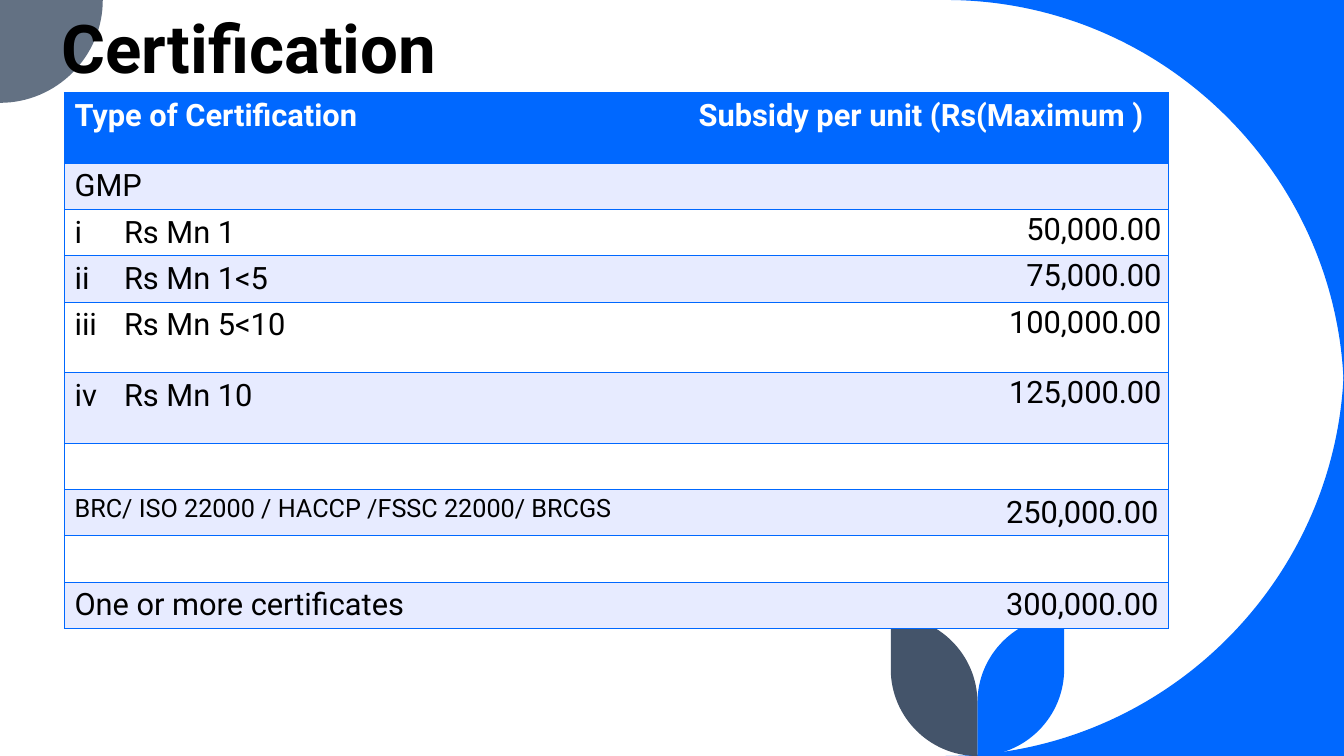
from lxml.etree import SubElement
from pptx import Presentation
from pptx.dml.color import RGBColor as RGB
from pptx.enum.text import MSO_ANCHOR as ANCHOR, MSO_AUTO_SIZE as FIT, PP_ALIGN as ALIGN
from pptx.oxml.ns import qn
from pptx.util import Inches, Pt

WIDTH, HEIGHT = Inches(13.33), Inches(7.5)
FONT = "Roboto"
COLORS = {"blue": "0068FF", "gray": "637183", "slate": "44546A",
          "band": "E7EBFF", "white": "FFFFFF", "black": "000000"}
COLUMNS = (3.68, 42.76, 35.71)
TALL, SHORT = 9.33, 6.13
TALL_ROWS = (0, 4, 5)
ROWS = [
    ("Type of Certification", "", "Subsidy per unit (Rs(Maximum )"),
    ("GMP", "", ""),
    ("i", "Rs Mn 1", "50,000.00"),
    ("ii", "Rs Mn 1<5", "75,000.00"),
    ("iii", "Rs Mn 5<10", "100,000.00"),
    ("iv", "Rs Mn 10", "125,000.00"),
    ("", "", ""),
    ("BRC/ ISO 22000 / HACCP /FSSC 22000/ BRCGS", "", "250,000.00"),
    ("", "", ""),
    ("One or more certificates", "", "300,000.00"),
]


def x(share):
    """Return a percentage of the slide width."""
    return round(WIDTH * share / 100)


def y(share):
    """Return a percentage of the slide height."""
    return round(HEIGHT * share / 100)


def color(name):
    """Return a palette colour."""
    return RGB.from_string(COLORS[name])


def arc(start, corner, end):
    """Return the four Bezier points of a quarter circle bending towards a corner."""
    controls = [tuple(a + 0.55 * (c - a) for a, c in zip(point, corner))
                for point in (start, end)]
    return [start, *controls, end]


def bend(sp, first):
    """Turn three straight segments of an outline into one curve."""
    lines = list(next(sp._element.iter(qn("a:path"))))[first:first + 3]
    curve = lines[0].makeelement(qn("a:cubicBezTo"))
    lines[0].addprevious(curve)
    for line in lines:
        curve.append(line[0])
        line.getparent().remove(line)


def add_outline(s, fill, *parts):
    """Draw a closed filled outline made of arcs and single points."""
    points = [(x(px), y(py)) for part in parts for px, py in part]
    builder = s.shapes.build_freeform(*points[0])
    builder.add_line_segments(points[1:])
    sp = builder.convert_to_shape()
    for i in reversed([i for i, part in enumerate(parts) if len(part) == 4]):
        bend(sp, sum(len(part) for part in parts[:i]) + 1)
    sp.shadow.inherit = False
    sp.fill.solid()
    sp.fill.fore_color.rgb = color(fill)
    sp.line.fill.background()


def add_leaf(s, fill, outer):
    """Draw a leaf from the middle stem to its outer edge."""
    stem, tip, root, side, base = 72.73, 81.46, 92.93, 88.53, 100
    add_outline(s, fill, arc((outer, side), (outer, base), (stem, base)),
                arc((stem, root), (stem, tip), (outer, tip)))


def add_decoration(s):
    """Draw the curved corners and the two leaves."""
    edge, big = 70.37, 52.67
    add_outline(s, "blue", arc((edge, 0), (100, 0), (100, big)), [(100, 0)])
    add_outline(s, "blue", arc((100, 100 - big), (100, 100), (edge, 100)), [(100, 100)])
    add_outline(s, "gray", arc((7.65, 0), (7.65, 13.6), (0, 13.6)), [(0, 0)])
    add_leaf(s, "blue", 79.18)
    add_leaf(s, "slate", 66.28)


def format_runs(p, size, name, bold):
    """Set the font of every run in a paragraph."""
    for r in p.runs:
        r.font.name, r.font.size, r.font.bold = FONT, Pt(size), bold
        r.font.color.rgb = color(name)


def set_borders(cell, sides):
    """Give a cell blue borders on the listed sides only."""
    tc_pr = cell._tc.get_or_add_tcPr()
    for side in "LRTB":
        ln = SubElement(tc_pr, qn(f"a:ln{side}"), w=str(Pt(1)))
        if side in sides:
            fill = SubElement(ln, qn("a:solidFill"))
            SubElement(fill, qn("a:srgbClr"), val=COLORS["blue"])
        else:
            SubElement(ln, qn("a:noFill"))


def fill_cell(cell, text, row, col):
    """Write and format one table cell."""
    set_borders(cell, ("LTB", "TB", "RTB")[col])
    cell.fill.solid()
    cell.fill.fore_color.rgb = color("blue" if row == 0 else "band" if row % 2 else "white")
    if not text:
        return
    cell.text_frame.text = text
    p = cell.text_frame.paragraphs[0]
    if col == 2 and row:
        p.alignment = ALIGN.RIGHT
        if ROWS[row][1]:
            cell.margin_left = cell.margin_right = Inches(0.07)
            cell.margin_top = cell.margin_bottom = 0
            p.line_spacing, p.space_after = 1.07, Pt(8)
            p_pr = p._p.get_or_add_pPr()
            p_pr.set("marL", "0")
            p_pr.set("indent", str(-Inches(0.06)))
    size = 18 if text.startswith("BRC/") else 22
    format_runs(p, size, "black" if row else "white", row == 0)


def add_rates(s):
    """Add the table of subsidies per certification."""
    heights = [TALL if i in TALL_ROWS else SHORT for i in range(len(ROWS))]
    frame = s.shapes.add_table(len(ROWS), len(COLUMNS), x(4.8), y(12.27),
                               x(sum(COLUMNS)), y(sum(heights)))
    table = frame.table
    for column, share in zip(table.columns, COLUMNS):
        column.width = x(share)
    for i, (values, share) in enumerate(zip(ROWS, heights)):
        table.rows[i].height = y(share)
        for j, text in enumerate(values):
            fill_cell(table.cell(i, j), text, i, j)
        if not values[1]:
            table.cell(i, 0).merge(table.cell(i, 1))


def set_title(s, text):
    """Place the title in front and format it."""
    sp = s.shapes.title
    sp.left, sp.top, sp.width, sp.height = x(3.83), y(2.13), x(76.29), y(10.13)
    tf = sp.text_frame
    tf.text = text
    tf.word_wrap, tf.auto_size, tf.vertical_anchor = True, FIT.NONE, ANCHOR.BOTTOM
    p = tf.paragraphs[0]
    p.alignment, p.line_spacing = ALIGN.LEFT, 0.9
    format_runs(p, 48, "black", True)
    s.shapes._spTree.append(sp._element)


def main():
    """Build and save the certification slide."""
    prs = Presentation()
    prs.slide_width, prs.slide_height = WIDTH, HEIGHT
    s = prs.slides.add_slide(prs.slide_layouts[5])
    add_decoration(s)
    add_rates(s)
    set_title(s, "Certification")
    prs.save("out.pptx")


if __name__ == "__main__":
    main()
